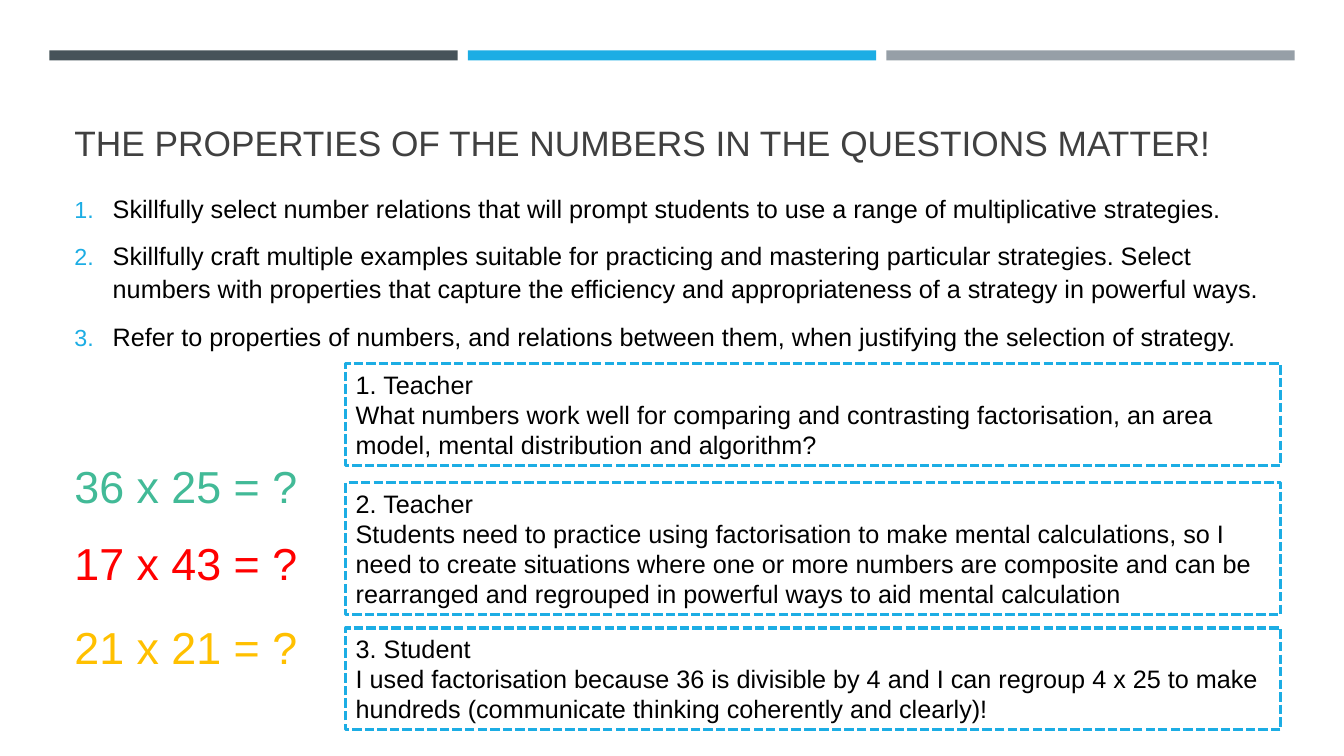
from pptx import Presentation
from pptx.dml.color import RGBColor
from pptx.enum.dml import MSO_LINE
from pptx.enum.shapes import MSO_SHAPE
from pptx.enum.text import MSO_ANCHOR, PP_ALIGN
from pptx.oxml.ns import qn
from pptx.util import Inches, Pt
from lxml import etree

RECTANGLE = MSO_SHAPE.RECTANGLE
SQUARE_DOT = MSO_LINE.SQUARE_DOT
TOP, MIDDLE, BOTTOM = MSO_ANCHOR.TOP, MSO_ANCHOR.MIDDLE, MSO_ANCHOR.BOTTOM
LEFT = PP_ALIGN.LEFT

COLOURS = {
    "slate": "465359", "blue": "1CADE4", "grey": "969FA7", "heading": "404040",
    "black": "000000", "green": "42BA97", "red": "FF0000", "amber": "FFC000",
}
FONT = "Arial"

HEADING = "THE PROPERTIES OF THE NUMBERS IN THE QUESTIONS MATTER!"
PRINCIPLES = [
    "Skillfully select number relations that will prompt students to use a range of multiplicative strategies.",
    "Skillfully craft multiple examples suitable for practicing and mastering particular strategies. "
    "Select numbers with properties that capture the efficiency and appropriateness of a strategy in powerful ways.",
    "Refer to properties of numbers, and relations between them, when justifying the selection of strategy.",
]
QUESTIONS = [
    ("36 x 25 = ?", "green", 4.5),
    ("17 x 43 = ?", "red", 5.27),
    ("21 x 21 = ?", "amber", 6.1),
]
VOICES = [
    ("1. Teacher",
     "What numbers work well for comparing and contrasting factorisation, an area model, "
     "mental distribution and algorithm?", 3.61, 3),
    ("2. Teacher",
     "Students need to practice using factorisation to make mental calculations, so I need to create "
     "situations where one or more numbers are composite and can be rearranged and regrouped in "
     "powerful ways to aid mental calculation", 4.79, 4),
    ("3. Student",
     "I used factorisation because 36 is divisible by 4 and I can regroup 4 x 25 to make hundreds "
     "(communicate thinking coherently and clearly)!", 6.23, 3),
]
BANDS = ["slate", "blue", "grey"]

SLIDE_W, SLIDE_H = 13.33, 7.5
BAND_LEFT, BAND_TOP, BAND_W, BAND_H, BAND_STEP = 0.49, 0.5, 4.05, 0.1, 4.15
MARGIN, CONTENT_W = 0.64, 12.06
VOICE_LEFT, VOICE_W = 3.43, 9.27
LINE_H, VOICE_PADDING = 0.3, 0.11
INDENT = 0.38


def rgb(name):
    return RGBColor.from_string(COLOURS[name])


def add_text(slide, box, lines, size, colour, anchor=TOP, numbered=False):
    holder = slide.shapes.add_textbox(*map(Inches, box))
    frame = holder.text_frame
    frame.word_wrap = True
    frame.vertical_anchor = anchor
    frame.text = "\n".join(lines)
    for paragraph in frame.paragraphs:
        paragraph.alignment = LEFT
        if numbered:
            number_paragraph(paragraph)
        paragraph.font.name = FONT
        paragraph.font.size = Pt(size)
        paragraph.font.color.rgb = rgb(colour)
    return holder


def number_paragraph(paragraph):
    properties = paragraph._p.get_or_add_pPr()
    properties.set("marL", str(Inches(INDENT)))
    properties.set("indent", str(-Inches(INDENT)))
    tint = etree.SubElement(properties, qn("a:buClr"))
    etree.SubElement(tint, qn("a:srgbClr"), val=COLOURS["blue"])
    etree.SubElement(properties, qn("a:buSzPct"), val="92000")
    etree.SubElement(properties, qn("a:buFont"), typeface=FONT)
    etree.SubElement(properties, qn("a:buAutoNum"), type="arabicPeriod")
    paragraph.line_spacing = 1.1
    paragraph.space_before = Pt(4)
    paragraph.space_after = Pt(6)


def main():
    deck = Presentation()
    deck.slide_width, deck.slide_height = Inches(SLIDE_W), Inches(SLIDE_H)
    slide = deck.slides.add_slide(deck.slide_layouts[6])

    for column, colour in enumerate(BANDS):
        left = BAND_LEFT + column * BAND_STEP
        band = slide.shapes.add_shape(RECTANGLE, *map(Inches, (left, BAND_TOP, BAND_W, BAND_H)))
        band.shadow.inherit = False
        band.fill.solid()
        band.fill.fore_color.rgb = rgb(colour)
        band.line.fill.background()

    heading = add_text(slide, (MARGIN, 0.77, CONTENT_W, 1.3), [HEADING], 25.2, "heading", BOTTOM)
    heading.text_frame.margin_bottom = Inches(0.45)
    add_text(slide, (MARGIN, 1.84, CONTENT_W, 1.69), PRINCIPLES, 18, "black", MIDDLE, numbered=True)

    for question, colour, top in QUESTIONS:
        add_text(slide, (MARGIN, top, 3.83, 0.64), [question], 32, colour)

    for speaker, words, top, rows in VOICES:
        box = (VOICE_LEFT, top, VOICE_W, rows * LINE_H + VOICE_PADDING)
        voice = add_text(slide, box, [speaker, words], 18, "black")
        voice.line.color.rgb = rgb("blue")
        voice.line.width = Pt(2.25)
        voice.line.dash_style = SQUARE_DOT

    deck.save("out.pptx")


if __name__ == "__main__":
    main()
